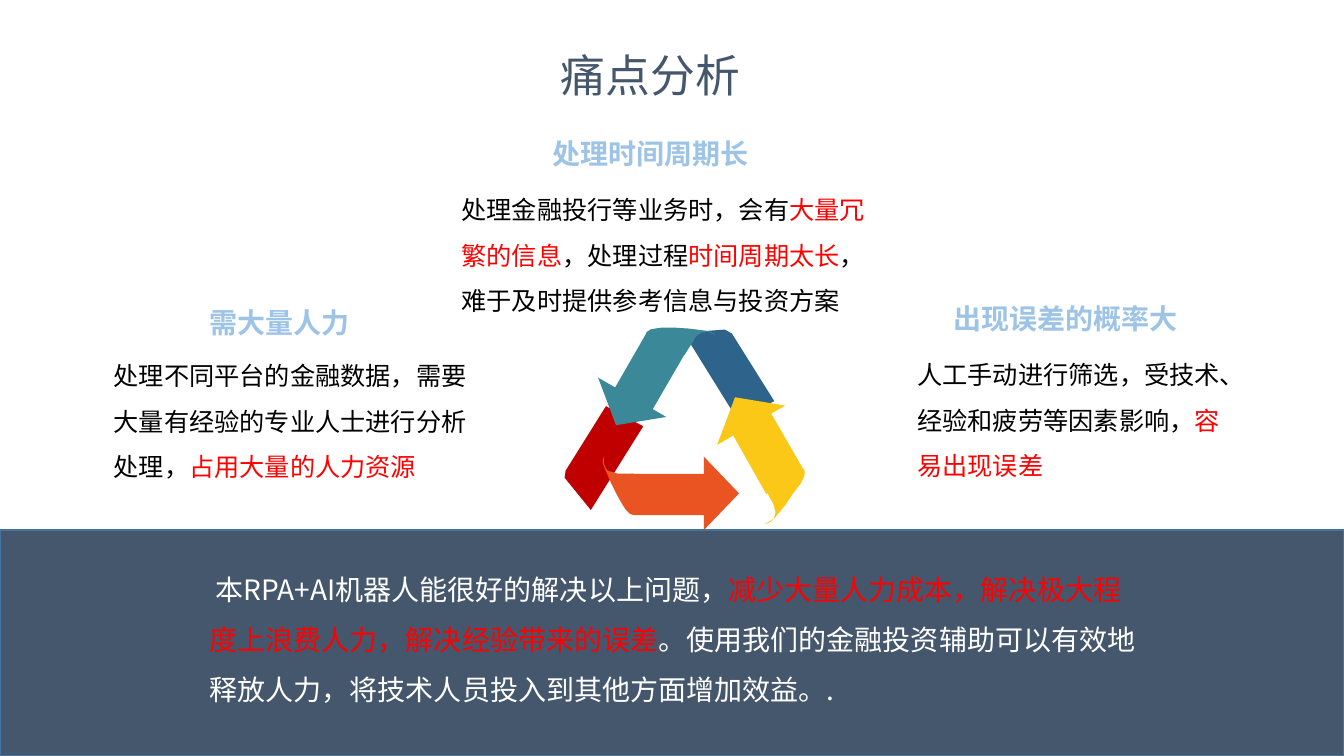
from lxml import etree
from pptx import Presentation
from pptx.dml import color
from pptx.enum import shapes, text
from pptx.oxml import ns
from pptx.util import Inches, Pt

SLATE, SKY, BLACK, WHITE, RED = "45576D", "9DC3E6", "000000", "FFFFFF", "FF0000"
BLUE, GOLD, CRIMSON, TEAL, ORANGE = "2E648B", "FCC818", "C00000", "3A8898", "EA5322"


def rgb(value):
    return color.RGBColor.from_string(value)


class SlideBuilder:
    font = "Noto Sans CJK SC"

    def __init__(self, page):
        self.page = page

    def paint(self, shape, fill, line=None):
        shape.shadow.inherit = False
        shape.fill.solid()
        shape.fill.fore_color.rgb = rgb(fill)
        if line:
            shape.line.color.rgb = rgb(line)
            shape.line.width = Pt(1)
        else:
            shape.line.fill.background()

    def preset(self, kind, place, fill, line=None, rotation=0):
        shape = self.page.shapes.add_shape(kind, *map(Inches, place))
        shape.rotation = rotation
        self.paint(shape, fill, line)

    def outline(self, points, fill):
        corners = [(Inches(x), Inches(y)) for x, y in points]
        builder = self.page.shapes.build_freeform(*corners[0])
        builder.add_line_segments(corners[1:], close=True)
        self.paint(builder.convert_to_shape(), fill)

    def text(self, place, paragraphs, size, bold=False, centred=False,
             spacing=1.0, wrap=True, indent=0):
        box = self.page.shapes.add_textbox(*map(Inches, place))
        frame = box.text_frame
        frame.word_wrap = wrap
        frame.auto_size = text.MSO_AUTO_SIZE.SHAPE_TO_FIT_TEXT
        for index, spans in enumerate(paragraphs):
            para = frame.add_paragraph() if index else frame.paragraphs[0]
            para.alignment = text.PP_ALIGN.CENTER if centred else text.PP_ALIGN.LEFT
            para.line_spacing = spacing
            para.font.size = Pt(size)
            para.font.bold = bold
            para.font.name = self.font
            properties = para._p.pPr
            if indent:
                properties.set("indent", str(Inches(indent)))
            defaults = properties.find(ns.qn("a:defRPr"))
            etree.SubElement(defaults, ns.qn("a:ea"), typeface=self.font)
            for words, shade in spans:
                span = para.add_run()
                span.text = words
                span.font.color.rgb = rgb(shade)

    def heading(self, place, words):
        self.text(place, [[(words, SKY)]], 20, bold=True, centred=True)

    def body(self, place, paragraphs):
        self.text(place, paragraphs, 18, spacing=1.5)


HEADINGS = [
    ((8.89, 2.94, 3.35, 0.44), "出现误差的概率大"),
    ((1.18, 2.98, 3.19, 0.44), "需大量人力"),
    ((4.86, 1.31, 3.19, 0.44), "处理时间周期长"),
]

BODIES = [
    ((4.48, 1.73, 4.37, 1.41), [[
        ("处理金融投行等业务时，会有", BLACK), ("大量冗繁的信息", RED),
        ("，处理过程", BLACK), ("时间周期太长", RED),
        ("，难于及时提供参考信息与投资方案", BLACK)]]),
    ((1.03, 3.38, 3.84, 1.41), [[
        ("处理不同平台的金融数据，需要大量有经验的专业人士进行分析处理，", BLACK),
        ("占用大量的人力资源", RED)]]),
    ((9, 3.37, 3.35, 1.41), [
        [("人工手动进行筛选，受技术、", BLACK)],
        [("经验和疲劳等因素影响，", BLACK), ("容易出现误差", RED)]]),
]

SUMMARY = [[
    ("本RPA+AI机器人能很好的解决以上问题，", WHITE),
    ("减少大量人力成本，解决极大程度上浪费人力，解决经验带来的误差", RED),
    ("。使用我们的金融投资辅助可以有效地释放人力，将技术人员投入到其他方面增加效益。.", WHITE)]]

RIBBONS = [
    (BLUE, [(7.32, 4.17), (6.78, 3.3), (7.19, 3.27), (7.26, 3.31), (7.68, 3.98)]),
    (GOLD, [(7.21, 4.21), (7.6, 4.9), (7.8, 4.79), (7.97, 4.66), (7.59, 4)]),
    (GOLD, [(7.6, 4.87), (7.97, 4.65), (7.98, 4.67), (7.98, 4.71), (7.97, 4.74),
            (7.94, 4.8), (7.87, 4.89), (7.79, 5.01), (7.69, 5.13), (7.65, 5.17),
            (7.62, 5.19), (7.58, 5.2), (7.62, 5.18), (7.65, 5.16), (7.67, 5.15),
            (7.69, 5.1), (7.69, 5.07), (7.67, 5)]),
    (CRIMSON, [(6.38, 4.23), (5.86, 5.06), (5.6, 4.74), (5.61, 4.67), (6.01, 4.03)]),
    (TEAL, [(6.41, 4.17), (6.81, 3.48), (6.61, 3.37), (6.42, 3.29), (6.04, 3.95)]),
    (TEAL, [(6.79, 3.52), (6.41, 3.3), (6.45, 3.27), (6.5, 3.26), (6.57, 3.25),
            (6.68, 3.25), (6.83, 3.26), (6.99, 3.28), (7.04, 3.29), (7.08, 3.31),
            (7.11, 3.34), (7.07, 3.31), (7.01, 3.29), (6.96, 3.3), (6.9, 3.34),
            (6.88, 3.38)]),
    (ORANGE, [(6.29, 4.7), (6.29, 5.11), (6.25, 5.1), (6.21, 5.06), (6.17, 5),
              (6.12, 4.91), (6.06, 4.79), (6, 4.65), (5.98, 4.6), (5.98, 4.56),
              (5.99, 4.53), (5.99, 4.6), (6.01, 4.65), (6.03, 4.67), (6.06, 4.68),
              (6.13, 4.7)]),
    (ORANGE, [(7.12, 4.7), (6.26, 4.7), (6.26, 4.91), (6.29, 5.11), (7.12, 5.11)]),
]

ARROW_TIPS = [
    (GOLD, (6.98, 3.92, 0.78, 0.32), 330),
    (TEAL, (5.8, 3.92, 0.78, 0.32), 210),
    (ORANGE, (6.79, 4.72, 0.73, 0.35), 90),
]


def main():
    deck = Presentation()
    deck.slide_width, deck.slide_height = Inches(13.33), Inches(7.5)
    slide = SlideBuilder(deck.slides.add_slide(deck.slide_layouts[6]))
    slide.preset(shapes.MSO_SHAPE.RECTANGLE, (0, 5.26, 13.33, 2.24), SLATE, "43739E")
    slide.text((5.45, 0.42, 2, 0.64), [[("痛点分析", SLATE)]], 32,
               centred=True, wrap=False)
    for place, paragraphs in BODIES:
        slide.body(place, paragraphs)
    slide.text((1.98, 5.46, 9.48, 1.56), SUMMARY, 20, spacing=1.5, indent=0.06)
    for place, words in HEADINGS:
        slide.heading(place, words)
    for fill, points in RIBBONS:
        slide.outline(points, fill)
    for fill, place, rotation in ARROW_TIPS:
        slide.preset(shapes.MSO_SHAPE.ISOSCELES_TRIANGLE, place, fill, rotation=rotation)
    deck.save("out.pptx")


if __name__ == "__main__":
    main()
